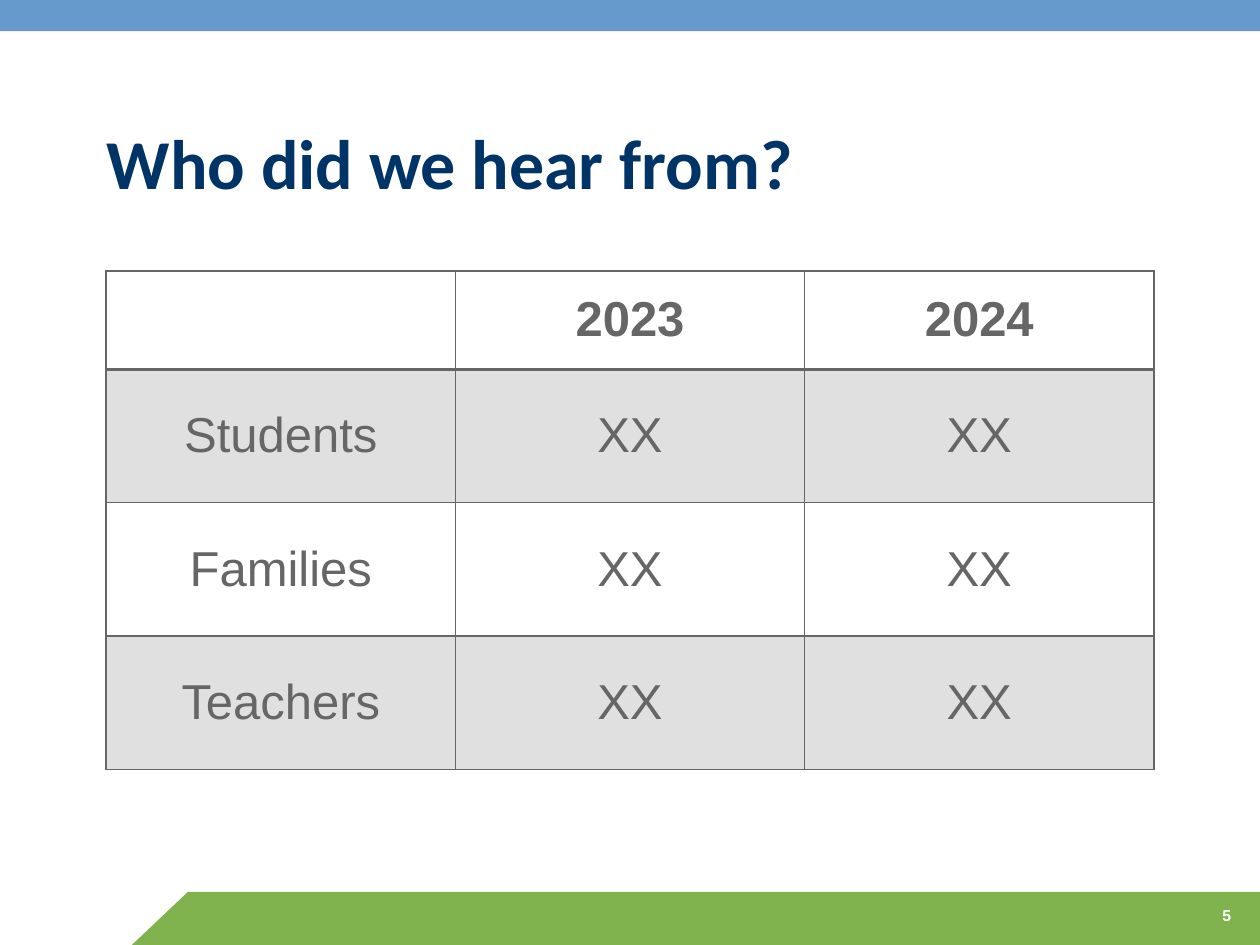
from lxml.etree import SubElement
from pptx import Presentation
from pptx.dml.color import RGBColor
from pptx.enum.shapes import MSO_SHAPE as SHAPE
from pptx.enum.text import MSO_ANCHOR as ANCHOR, PP_ALIGN as ALIGN
from pptx.oxml.ns import qn
from pptx.util import Cm, Pt

COLORS = {"blue": "6699CC", "green": "80B34D", "navy": "003366",
          "gray": "666666", "white": "FFFFFF"}


def style(p, font, size, color, bold, align):
    p.alignment = align
    for r in p.runs:
        r.font.name, r.font.size, r.font.bold = font, Pt(size), bold
        r.font.color.rgb = RGBColor.from_string(COLORS[color])


def add_border(cell, side, width):
    ln = SubElement(cell._tc.get_or_add_tcPr(), qn(f"a:ln{side}"), w=str(Pt(width)))
    fill = SubElement(ln, qn("a:solidFill"))
    SubElement(fill, qn("a:srgbClr"), val=COLORS["gray"])


prs = Presentation()
prs.slide_width, prs.slide_height = Cm(25.4), Cm(19.05)
s = prs.slides.add_slide(prs.slide_layouts[5])

# Footer band with slanted end, and top band
bands = [
    (SHAPE.RECTANGLE, 3.79, 17.98, 21.61, 1.07, "green"),
    (SHAPE.RIGHT_TRIANGLE, 2.66, 17.98, 1.13, 1.07, "green"),
    (SHAPE.RECTANGLE, 0, 0, 25.4, 0.63, "blue"),
]
for kind, x, y, w, h, color in bands:
    sp = s.shapes.add_shape(kind, Cm(x), Cm(y), Cm(w), Cm(h))
    sp.shadow.inherit = False
    sp.fill.solid()
    sp.fill.fore_color.rgb = RGBColor.from_string(COLORS[color])
    sp.line.fill.background()
    if kind == SHAPE.RIGHT_TRIANGLE:
        sp.element.spPr.xfrm.set("flipH", "1")

# Title
title = s.shapes.title
title.left, title.top, title.width, title.height = Cm(1.9), Cm(1.98), Cm(21.6), Cm(2.24)
tf = title.text_frame
tf.text = "Who did we hear from?"
tf.vertical_anchor = ANCHOR.BOTTOM
style(tf.paragraphs[0], "Calibri", 40, "navy", True, ALIGN.LEFT)

# Response table
rows = [
    ["", "2023", "2024"],
    ["Students", "XX", "XX"],
    ["Families", "XX", "XX"],
    ["Teachers", "XX", "XX"],
]
table = s.shapes.add_table(len(rows), 3, Cm(2.14), Cm(5.46), Cm(21.12), Cm(10.06)).table
for col in table.columns:
    col.width = Cm(7.04)
for i, row in enumerate(rows):
    table.rows[i].height = Cm(2.69 if i else 1.98)
    for j, text in enumerate(row):
        cell = table.cell(i, j)
        cell.text = text
        cell.vertical_anchor = ANCHOR.MIDDLE
        style(cell.text_frame.paragraphs[0], "Arial", 28, "gray", i == 0, ALIGN.CENTER)
        for side in "LRTB":
            heavy = (i, side) in [(0, "B"), (1, "T")]
            add_border(cell, side, 2 if heavy else 1)
        if i % 2:
            cell.fill.solid()
            cell.fill.fore_color.rgb = RGBColor.from_string(COLORS["gray"])
            tint = cell._tc.tcPr.find(f"{qn('a:solidFill')}/{qn('a:srgbClr')}")
            SubElement(tint, qn("a:alpha"), val="20000")
        else:
            cell.fill.background()

# Slide number
tf = s.shapes.add_textbox(Cm(22.1), Cm(18.14), Cm(2.97), Cm(0.64)).text_frame
tf.word_wrap = True
tf.text = "5"
style(tf.paragraphs[0], "Arial", 9, "white", True, ALIGN.RIGHT)

prs.save("out.pptx")
